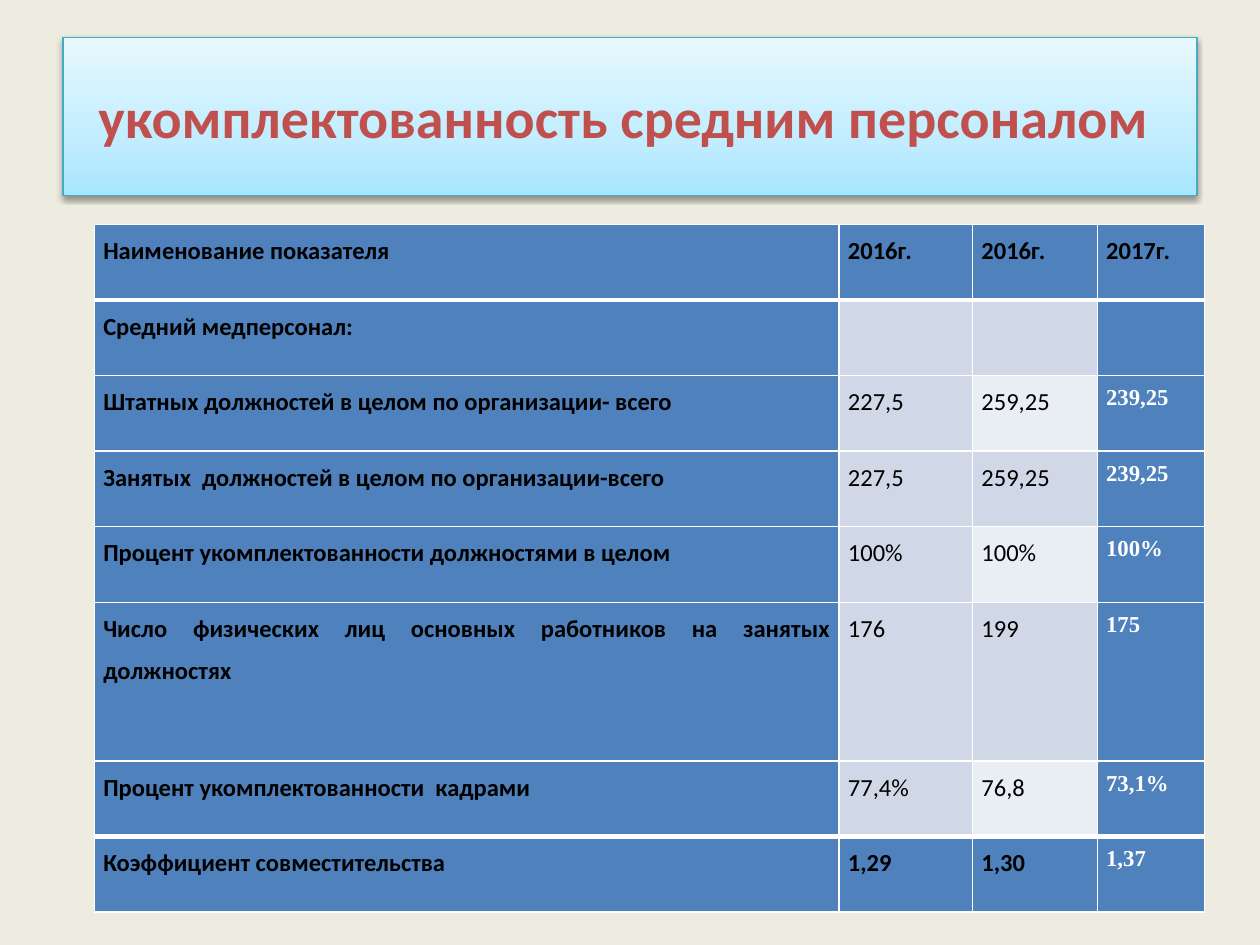
"""Build a slide with a table of nursing staff coverage by year."""
import copy

import pptx
import pptx.dml.color
import pptx.enum.shapes
import pptx.enum.text
import pptx.oxml
import pptx.oxml.ns
import pptx.util
from pptx.util import Inches

RGBColor = pptx.dml.color.RGBColor
BACKGROUND = RGBColor(0xEE, 0xEC, 0xE1)
BLACK = RGBColor(0, 0, 0)
WHITE = RGBColor(0xFF, 0xFF, 0xFF)
RED = RGBColor(0xC0, 0x50, 0x4D)
TEAL = RGBColor(0x46, 0xAA, 0xC5)
BLUE = RGBColor(0x4F, 0x81, 0xBD)
BAND_DARK = RGBColor(0xD0, 0xD8, 0xE8)
BAND_LIGHT = RGBColor(0xE9, 0xED, 0xF4)
TITLE_GRADIENT = [
    (0, RGBColor(0xA7, 0xE6, 0xFF)),
    (0.35, RGBColor(0xC1, 0xED, 0xFF)),
    (1, RGBColor(0xE7, 0xF8, 0xFF)),
]

TITLE = "укомплектованность средним персоналом "
ROWS = [
    ("Наименование показателя", "2016г.", "2016г.", "2017г."),
    ("Средний медперсонал:", "", "", ""),
    ("Штатных должностей в целом по организации- всего", "227,5", "259,25", "239,25"),
    ("Занятых  должностей в целом по организации-всего", "227,5", "259,25", "239,25"),
    ("Процент укомплектованности должностями в целом", "100%", "100%", "100%"),
    ("Число физических лиц основных работников на занятых должностях", "176", "199", "175"),
    ("Процент укомплектованности  кадрами", "77,4%", "76,8", "73,1%"),
    ("Коэффициент совместительства", "1,29", "1,30", "1,37"),
]
COLUMN_WIDTHS = [5.91, 1.06, 0.99, 0.85]
ROW_HEIGHT, TALL_ROW_HEIGHT, TALL_ROW = 0.6, 1.26, 5
LAST_ROW, LAST_COLUMN = len(ROWS) - 1, len(COLUMN_WIDTHS) - 1
NAMESPACE = pptx.oxml.ns.nsdecls("a")


def set_font(paragraph, name, size, color, bold):
    font = paragraph.font
    font.name, font.size, font.bold = name, pptx.util.Pt(size), bold
    font.color.rgb = color


def add_title(slide):
    shape = slide.shapes.add_shape(
        pptx.enum.shapes.MSO_SHAPE.RECTANGLE, Inches(0.5), Inches(0.3), Inches(9), Inches(1.25))
    shape.fill.gradient()
    shape.fill.gradient_angle = 90
    first_stop = shape.fill.gradient_stops[0]._gs
    first_stop.addnext(copy.deepcopy(first_stop))
    for stop, (position, color) in zip(shape.fill.gradient_stops, TITLE_GRADIENT):
        stop.position, stop.color.rgb = position, color
    shape.line.color.rgb = TEAL
    shape.line.width = pptx.util.Pt(0.75)
    shape.shadow.inherit = False
    effects = shape._element.spPr.find(pptx.oxml.ns.qn("a:effectLst"))
    effects.append(pptx.oxml.parse_xml(
        f'<a:outerShdw {NAMESPACE} blurRad="{pptx.util.Pt(3.1)}" dist="{pptx.util.Pt(1.6)}" '
        'dir="5400000" rotWithShape="0"><a:srgbClr val="000000"><a:alpha val="38000"/>'
        '</a:srgbClr></a:outerShdw>'))
    frame = shape.text_frame
    frame.word_wrap = True
    frame.vertical_anchor = pptx.enum.text.MSO_ANCHOR.MIDDLE
    paragraph = frame.paragraphs[0]
    paragraph.text = TITLE
    paragraph.alignment = pptx.enum.text.PP_ALIGN.CENTER
    set_font(paragraph, "Calibri", 32, RED, True)


def set_borders(cell, row):
    widths = {
        "L": 1,
        "R": 1,
        "T": 3 if row in (1, LAST_ROW) else 1,
        "B": 3 if row in (0, LAST_ROW - 1) else 1,
    }
    properties = cell._tc.get_or_add_tcPr()
    for side, width in widths.items():
        properties.append(pptx.oxml.parse_xml(
            f'<a:ln{side} {NAMESPACE} w="{pptx.util.Pt(width)}"><a:solidFill>'
            f'<a:srgbClr val="{WHITE}"/></a:solidFill></a:ln{side}>'))


def cell_color(row, column):
    if row in (0, LAST_ROW) or column in (0, LAST_COLUMN):
        return BLUE
    return BAND_LIGHT if column == 2 and row % 2 == 0 else BAND_DARK


def fill_cell(cell, row, column, text):
    set_borders(cell, row)
    cell.fill.solid()
    cell.fill.fore_color.rgb = cell_color(row, column)
    cell.margin_left = cell.margin_right = Inches(0.07)
    cell.margin_top = cell.margin_bottom = 0
    paragraph = cell.text_frame.paragraphs[0]
    paragraph.text = text
    paragraph.alignment = pptx.enum.text.PP_ALIGN.JUSTIFY
    paragraph.line_spacing = 1.4
    if column == LAST_COLUMN and row > 0:
        set_font(paragraph, "Times New Roman", 13, WHITE, True)
    else:
        set_font(paragraph, "Calibri", 14, BLACK, column == 0 or row in (0, LAST_ROW))


def add_staff_table(slide):
    heights = [TALL_ROW_HEIGHT if row == TALL_ROW else ROW_HEIGHT for row in range(len(ROWS))]
    table = slide.shapes.add_table(
        len(ROWS), len(COLUMN_WIDTHS), Inches(0.75), Inches(1.78),
        Inches(sum(COLUMN_WIDTHS)), Inches(sum(heights))).table
    for column, width in zip(table.columns, COLUMN_WIDTHS):
        column.width = Inches(width)
    for table_row, height in zip(table.rows, heights):
        table_row.height = Inches(height)
    for row, texts in enumerate(ROWS):
        for column, text in enumerate(texts):
            fill_cell(table.cell(row, column), row, column, text)


def main():
    presentation = pptx.Presentation()
    presentation.slide_width, presentation.slide_height = Inches(10), Inches(7.5)
    slide = presentation.slides.add_slide(presentation.slide_layouts[6])
    slide.background.fill.solid()
    slide.background.fill.fore_color.rgb = BACKGROUND
    add_title(slide)
    add_staff_table(slide)
    presentation.save("out.pptx")


if __name__ == "__main__":
    main()
